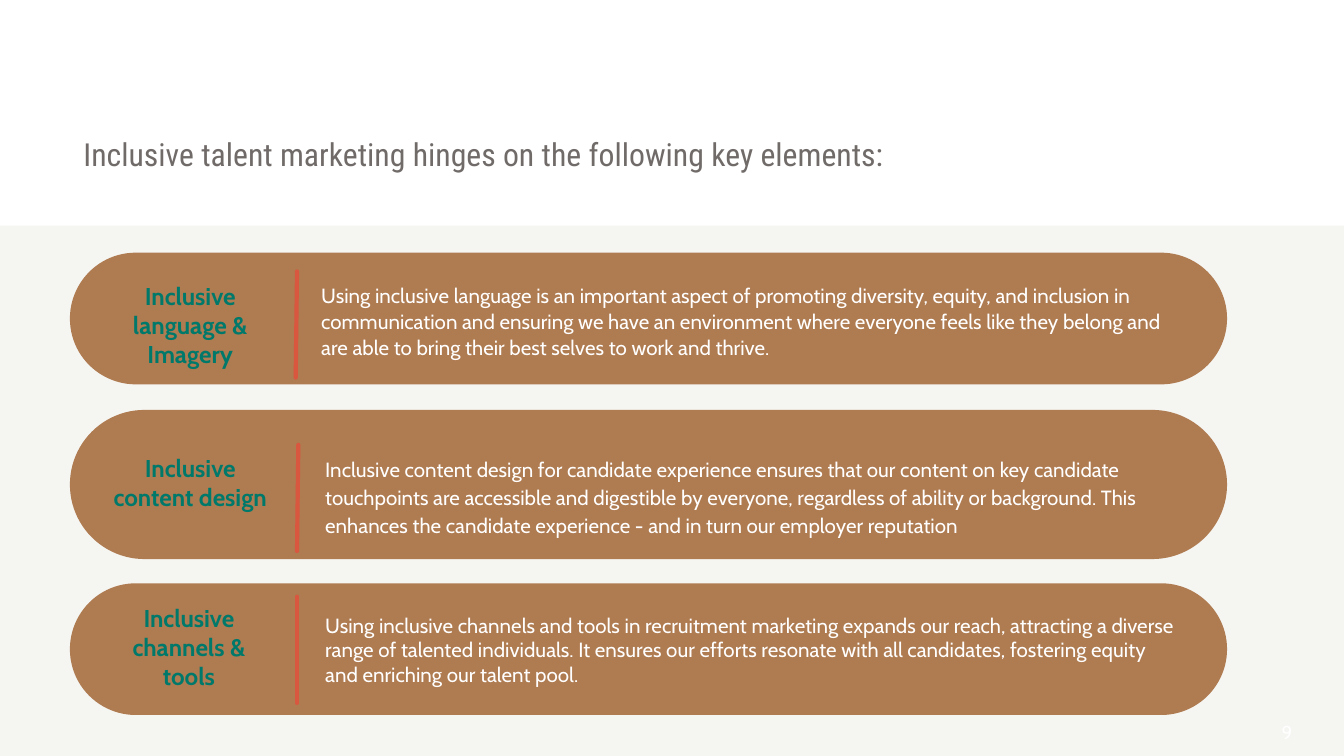
from pptx import Presentation
from pptx.dml.color import RGBColor
from pptx.enum.shapes import MSO_CONNECTOR as Connector, MSO_SHAPE as Shape
from pptx.enum.text import MSO_ANCHOR as Anchor, MSO_AUTO_SIZE as AutoSize, PP_ALIGN as Align
from pptx.oxml.ns import qn
from pptx.util import Inches, Pt
from lxml.etree import SubElement

TITLE = "Inclusive talent marketing hinges on the following key elements:"
PAGE_NUMBER = "9"

ROWS = [
    {
        "label": "Inclusive language & Imagery",
        "body": "Using inclusive language is an important aspect of promoting diversity, equity, "
                "and inclusion in communication and ensuring we have an environment where everyone "
                "feels like they belong and are able to bring their best selves to work and thrive.",
        "pill": (1.88, 0.98), "label_at": (0.81, 2.09), "body_at": (2.39, 2.1, 6.46, 0.57),
        "divider": (2.21, 2.02, 2.2), "spacing": {"line": 1.05, "before": 4, "after": 3},
    },
    {
        "label": "Inclusive content design",
        "body": "Inclusive content design for candidate experience ensures that our content on key "
                "candidate touchpoints are accessible and digestible by everyone, regardless of "
                "ability or background. This enhances the candidate experience - and in turn our "
                "employer reputation",
        "pill": (3.05, 1.11), "label_at": (0.81, 3.37), "body_at": (2.42, 3.37, 6.36, 0.61),
        "divider": (2.22, 3.31, 2.21), "spacing": {"line": 1.15},
    },
    {
        "label": "Inclusive channels & tools",
        "body": "Using inclusive channels and tools in recruitment marketing expands our reach, "
                "attracting a diverse range of talented individuals. It ensures our efforts resonate "
                "with all candidates, fostering equity and enriching our talent pool.",
        "pill": (4.34, 0.98), "label_at": (0.8, 4.49), "body_at": (2.42, 4.56, 6.36, 0.56),
        "divider": (2.21, 4.44, 2.21), "spacing": {},
    },
]

THEME = {
    "panel": "F5F5F2", "pill": "AF7B51", "divider": "D9563F",
    "title": ("Roboto Condensed", 17, "706B69", False),
    "label": ("Cabin", 13, "00796B", True),
    "body": ("Cabin", 11, "FFFFFF", False),
    "number": ("Cabin", 10, "FFFFFF", False),
}

PAGE_WIDTH = 10
PAGE_HEIGHT = PAGE_WIDTH * 9 / 16
PANEL_TOP = 1.68
PILL_LEFT, PILL_WIDTH = 0.52, 8.61
LABEL_SIZE = (1.21, 0.66)
DIVIDER_HEIGHT = 0.79


def color(value):
    return RGBColor.from_string(value)


def add_block(slide, kind, area, fill):
    block = slide.shapes.add_shape(kind, *map(Inches, area))
    block.shadow.inherit = False
    block.fill.solid()
    block.fill.fore_color.rgb = color(fill)
    block.line.fill.background()
    return block


def write(box, text, style, align=Align.LEFT, insets=(0, 0, 0, 0), grow=True,
          line=None, before=0, after=0):
    frame = box.text_frame
    frame.word_wrap = True
    frame.auto_size = AutoSize.SHAPE_TO_FIT_TEXT if grow else AutoSize.NONE
    frame.vertical_anchor = Anchor.TOP
    (frame.margin_left, frame.margin_top,
     frame.margin_right, frame.margin_bottom) = map(Inches, insets)
    para = frame.paragraphs[0]
    para.alignment = align
    para.line_spacing = line
    para.space_before, para.space_after = Pt(before), Pt(after)
    span = para.add_run()
    span.text = text
    name, size, ink, bold = THEME[style]
    span.font.name, span.font.size, span.font.bold = name, Pt(size), bold
    span.font.color.rgb = color(ink)


def add_text(slide, area, text, style, **options):
    write(slide.shapes.add_textbox(*map(Inches, area)), text, style, **options)


def add_divider(slide, top_x, top, bottom_x):
    ends = (top_x, top, bottom_x, top + DIVIDER_HEIGHT)
    divider = slide.shapes.add_connector(Connector.STRAIGHT, *map(Inches, ends))
    divider.line.color.rgb = color(THEME["divider"])
    divider.line.width = Pt(2.25)
    divider.line._get_or_add_ln().set("cap", "rnd")
    SubElement(divider._element.spPr, qn("a:effectLst"))


def add_row(slide, row):
    top, height = row["pill"]
    pill = add_block(slide, Shape.ROUNDED_RECTANGLE,
                     (PILL_LEFT, top, PILL_WIDTH, height), THEME["pill"])
    pill.adjustments[0] = 0.5
    add_divider(slide, *row["divider"])
    add_text(slide, row["label_at"] + LABEL_SIZE, row["label"], "label", align=Align.CENTER)
    add_text(slide, row["body_at"], row["body"], "body", **row["spacing"])


def main():
    deck = Presentation()
    deck.slide_width, deck.slide_height = Inches(PAGE_WIDTH), Inches(PAGE_HEIGHT)
    page = deck.slides.add_slide(deck.slide_layouts[5])

    title = page.shapes.title
    title.left, title.top, title.width, title.height = map(Inches, (0.62, 0.89, 8.13, 0.35))
    write(title, TITLE, "title", insets=(0, 0.1, 0.1, 0.1), grow=False, line=1.05)

    panel_area = (0, PANEL_TOP, PAGE_WIDTH, PAGE_HEIGHT - PANEL_TOP)
    add_block(page, Shape.RECTANGLE, panel_area, THEME["panel"])
    for row in ROWS:
        add_row(page, row)
    add_text(page, (9.4, 5.36, 0.35, 0.18), PAGE_NUMBER, "number", align=Align.CENTER)

    deck.save("out.pptx")


if __name__ == "__main__":
    main()
